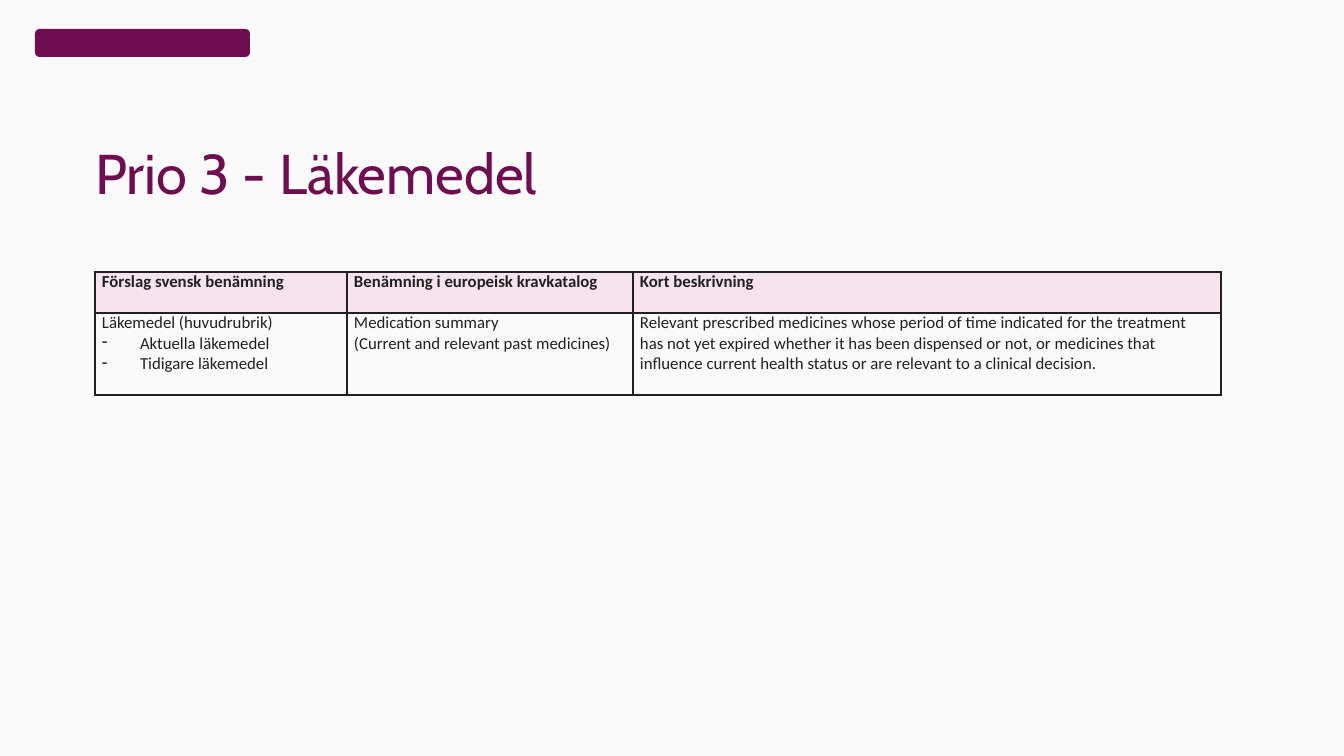
import pptx
import pptx.dml.color
import pptx.enum.shapes
import pptx.enum.text
import pptx.oxml.ns
import pptx.util
from lxml import etree

EMU_PER_PX = 914400 / 100.8
PLUM = "6E0E50"
INK = "212121"
PINK = "F7E3ED"
PAPER = "FAFAFA"

COLUMN_WIDTHS = [252, 286, 588]
ROW_HEIGHTS = [41, 82]
BULLET = "- "
ROWS = [
    ["Förslag svensk benämning", "Benämning i europeisk kravkatalog", "Kort beskrivning"],
    [
        "Läkemedel (huvudrubrik)\n- Aktuella läkemedel\n- Tidigare läkemedel",
        "Medication summary\n(Current and relevant past medicines)",
        "Relevant prescribed medicines whose period of time indicated for the treatment "
        "has not yet expired whether it has been dispensed or not, or medicines that "
        "influence current health status or are relevant to a clinical decision.",
    ],
]


def px(length):
    return pptx.util.Emu(round(length * EMU_PER_PX))


def rgb(value):
    return pptx.dml.color.RGBColor.from_string(value)


def format_runs(paragraph, font_name, size, color, bold=False):
    for run in paragraph.runs:
        run.font.name = font_name
        run.font.size = pptx.util.Pt(size)
        run.font.color.rgb = rgb(color)
        run.font.bold = bold


def add_child(parent, tag, **attributes):
    child = etree.SubElement(parent, pptx.oxml.ns.qn(tag))
    for name, value in attributes.items():
        child.set(name, str(value))
    return child


def add_dash(paragraph):
    """Give the paragraph a hanging dash bullet."""
    properties = paragraph._p.get_or_add_pPr()
    properties.set("marL", str(px(38)))
    properties.set("indent", str(-px(38)))
    add_child(properties, "a:buChar", char="-")


def add_borders(cell):
    properties = cell._tc.get_or_add_tcPr()
    for position, side in enumerate(("a:lnL", "a:lnR", "a:lnT", "a:lnB")):
        line = add_child(properties, side, w=pptx.util.Pt(1))
        add_child(add_child(line, "a:solidFill"), "a:srgbClr", val=INK)
        properties.insert(position, line)


def fill_cell(cell, text, is_header):
    cell.margin_left = cell.margin_right = px(7)
    cell.margin_top = cell.margin_bottom = 0
    if is_header:
        cell.fill.solid()
        cell.fill.fore_color.rgb = rgb(PINK)
    else:
        cell.fill.background()
    add_borders(cell)
    lines = text.split("\n")
    cell.text_frame.text = "\n".join(line.removeprefix(BULLET) for line in lines)
    for line, paragraph in zip(lines, cell.text_frame.paragraphs):
        format_runs(paragraph, "Calibri", 12, INK, bold=is_header)
        if line.startswith(BULLET):
            add_dash(paragraph)


def add_terms_table(slide, left, top):
    table = slide.shapes.add_table(
        len(ROWS), len(COLUMN_WIDTHS), px(left), px(top),
        px(sum(COLUMN_WIDTHS)), px(sum(ROW_HEIGHTS)),
    ).table
    table.horz_banding = False
    table.first_row = False
    for column, width in zip(table.columns, COLUMN_WIDTHS):
        column.width = px(width)
    for row_index, (height, texts) in enumerate(zip(ROW_HEIGHTS, ROWS)):
        table.rows[row_index].height = px(height)
        for column_index, text in enumerate(texts):
            fill_cell(table.cell(row_index, column_index), text, row_index == 0)


def set_title(slide, text, left, top, width, height):
    title = slide.shapes.title
    title.left, title.top, title.width, title.height = map(px, (left, top, width, height))
    frame = title.text_frame
    frame.text = text
    frame.word_wrap = True
    frame.auto_size = pptx.enum.text.MSO_AUTO_SIZE.SHAPE_TO_FIT_TEXT
    frame.vertical_anchor = pptx.enum.text.MSO_ANCHOR.BOTTOM
    frame.margin_left = frame.margin_right = frame.margin_top = frame.margin_bottom = 0
    heading = frame.paragraphs[0]
    heading.alignment = pptx.enum.text.PP_ALIGN.LEFT
    heading.line_spacing = 0.9
    format_runs(heading, "Cabin", 40, PLUM)


def add_brand_mark(slide, left, top, width, height):
    mark = slide.shapes.add_shape(
        pptx.enum.shapes.MSO_SHAPE.ROUNDED_RECTANGLE, *map(px, (left, top, width, height))
    )
    mark.shadow.inherit = False
    mark.fill.solid()
    mark.fill.fore_color.rgb = rgb(PLUM)
    mark.line.fill.background()


def main():
    deck = pptx.Presentation()
    deck.slide_width, deck.slide_height = px(1344), px(756)
    slide = deck.slides.add_slide(deck.slide_layouts.get_by_name("Title Only"))
    slide.background.fill.solid()
    slide.background.fill.fore_color.rgb = rgb(PAPER)
    add_brand_mark(slide, 35, 29, 215, 28)
    set_title(slide, "Prio 3 - Läkemedel", 95, 146, 1155, 61)
    add_terms_table(slide, 95, 272)
    deck.save("out.pptx")


if __name__ == "__main__":
    main()
